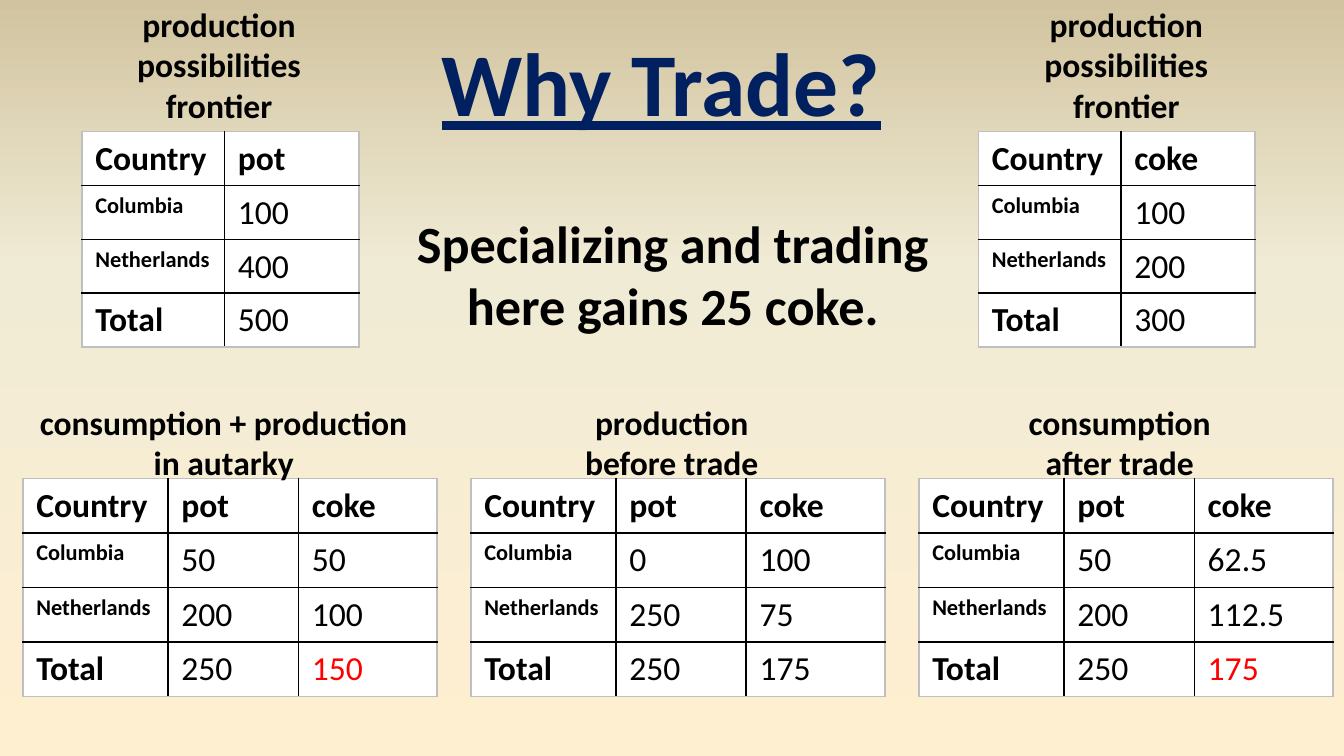
"""Build the "Why Trade?" slide with its five production and consumption tables."""
from copy import deepcopy

from lxml import etree
from pptx import Presentation
from pptx.dml.color import RGBColor
from pptx.enum.text import MSO_AUTO_SIZE, PP_ALIGN
from pptx.oxml.ns import qn
from pptx.util import Inches, Pt

CENTER = PP_ALIGN.CENTER
GROW = MSO_AUTO_SIZE.SHAPE_TO_FIT_TEXT
FONT = "Calibri"
COLORS = {"text": "000000", "title": "002060", "total": "FF0000",
          "cell": "FFFFFF", "grid": "000000", "frame": "BFBFBF"}
GRADIENT = [(0, "FFEFD1"), (65, "F0EBD5"), (100, "D1C39F")]
COUNTRIES = ["Columbia", "Netherlands", "Total"]
ROW_HEIGHTS = [0.15, 0.38, 0.38, 0.38]
TABLE_HEIGHT = 1.6
FRONTIER_TITLE = ["production", "possibilities", "frontier"]
FRONTIERS = [
    (0.61, 0.67, {"pot": ["100", "400", "500"]}),
    (7.28, 7.42, {"coke": ["100", "200", "300"]}),
]
STAGES = [
    (["consumption + production", "in autarky"],
     {"pot": ["50", "200", "250"], "coke": ["50", "100", "150"]}, True),
    (["production", "before trade"],
     {"pot": ["0", "250", "250"], "coke": ["100", "75", "175"]}, False),
    (["consumption", "after trade"],
     {"pot": ["50", "200", "250"], "coke": ["62.5", "112.5", "175"]}, True),
]


class SlideBuilder:
    """Hold the slide style and draw each kind of element."""

    def __init__(self, slide):
        self.s = slide

    def background(self, stops):
        fill = self.s.background.fill
        fill.gradient()
        fill.gradient_angle = 90
        gs_list = next(self.s.background._cSld.iter(qn("a:gsLst")))
        for gs in list(gs_list):
            gs_list.remove(gs)
        for position, color in stops:
            gs = etree.SubElement(gs_list, qn("a:gs"), pos=str(position * 1000))
            etree.SubElement(gs, qn("a:srgbClr"), val=color)

    def run(self, p, text, size=18, color="text", bold=True, underline=None):
        r = p.add_run()
        r.text = text
        r.font.name = FONT
        r.font.size = Pt(size)
        r.font.bold = bold
        r.font.underline = underline
        r.font.color.rgb = RGBColor.from_string(COLORS[color])

    def text(self, box, lines, wrap=True, **style):
        tf = self.s.shapes.add_textbox(*map(Inches, box)).text_frame
        tf.word_wrap = wrap
        tf.auto_size = GROW
        for i, line in enumerate(lines):
            p = tf.add_paragraph() if i else tf.paragraphs[0]
            p.alignment = CENTER
            self.run(p, line, **style)

    def borders(self, cell, outer):
        tc_pr = cell._tc.get_or_add_tcPr()
        for i, (side, is_outer) in enumerate(outer.items()):
            line = etree.Element(qn(f"a:{side}"), w=str(Pt(1)))
            fill = etree.SubElement(line, qn("a:solidFill"))
            color = COLORS["frame" if is_outer else "grid"]
            etree.SubElement(fill, qn("a:srgbClr"), val=color)
            tc_pr.insert(i, deepcopy(line))

    def table(self, left, top, widths, goods, red_total=False):
        rows = [["Country", *goods]]
        rows += [list(row) for row in zip(COUNTRIES, *goods.values())]
        last_row, last_col = len(rows) - 1, len(widths) - 1
        frame = self.s.shapes.add_table(
            len(rows), len(widths), Inches(left), Inches(top),
            Inches(sum(widths)), Inches(TABLE_HEIGHT))
        table = frame.table
        table.first_row = table.horz_banding = False
        for column, width in zip(table.columns, widths):
            column.width = Inches(width)
        for i, row in enumerate(rows):
            table.rows[i].height = Inches(ROW_HEIGHTS[i])
            for j, value in enumerate(row):
                cell = table.cell(i, j)
                cell.fill.solid()
                cell.fill.fore_color.rgb = RGBColor.from_string(COLORS["cell"])
                self.borders(cell, {"lnL": j == 0, "lnR": j == last_col,
                                    "lnT": i == 0, "lnB": i == last_row})
                is_red = red_total and i == last_row and j == last_col
                self.run(cell.text_frame.paragraphs[0], value,
                         size=12 if j == 0 and i in (1, 2) else 18,
                         color="total" if is_red else "text",
                         bold=i == 0 or j == 0)
        frame.height = Inches(TABLE_HEIGHT)


def main():
    prs = Presentation()
    prs.slide_width = Inches(10)
    prs.slide_height = prs.slide_width * 9 // 16
    builder = SlideBuilder(prs.slides.add_slide(prs.slide_layouts[6]))
    builder.background(GRADIENT)

    for i, (_, goods, red_total) in enumerate(STAGES):
        builder.table(0.17 + i * 10 / 3, 3.56, [1.08, 0.97, 1.03], goods, red_total)
    for i, (title, _, _) in enumerate(STAGES):
        builder.text((0.08 + i * 10 / 3, 2.94, 3.17, 0.71), title)

    builder.text((3.17, 0.15, 3.5, 0.91), ["Why Trade?"], wrap=False,
                 size=48, color="title", underline=True)

    for table_left, _, goods in FRONTIERS:
        builder.table(table_left, 0.98, [1.06, 1], goods)
    for _, title_left, _ in FRONTIERS:
        builder.text((title_left, -0.02, 1.92, 1.01), FRONTIER_TITLE)

    builder.text((2.67, 1.52, 4.67, 1.04),
                 ["Specializing and trading", "here gains 25 coke."], size=28)
    prs.save("out.pptx")


if __name__ == "__main__":
    main()
